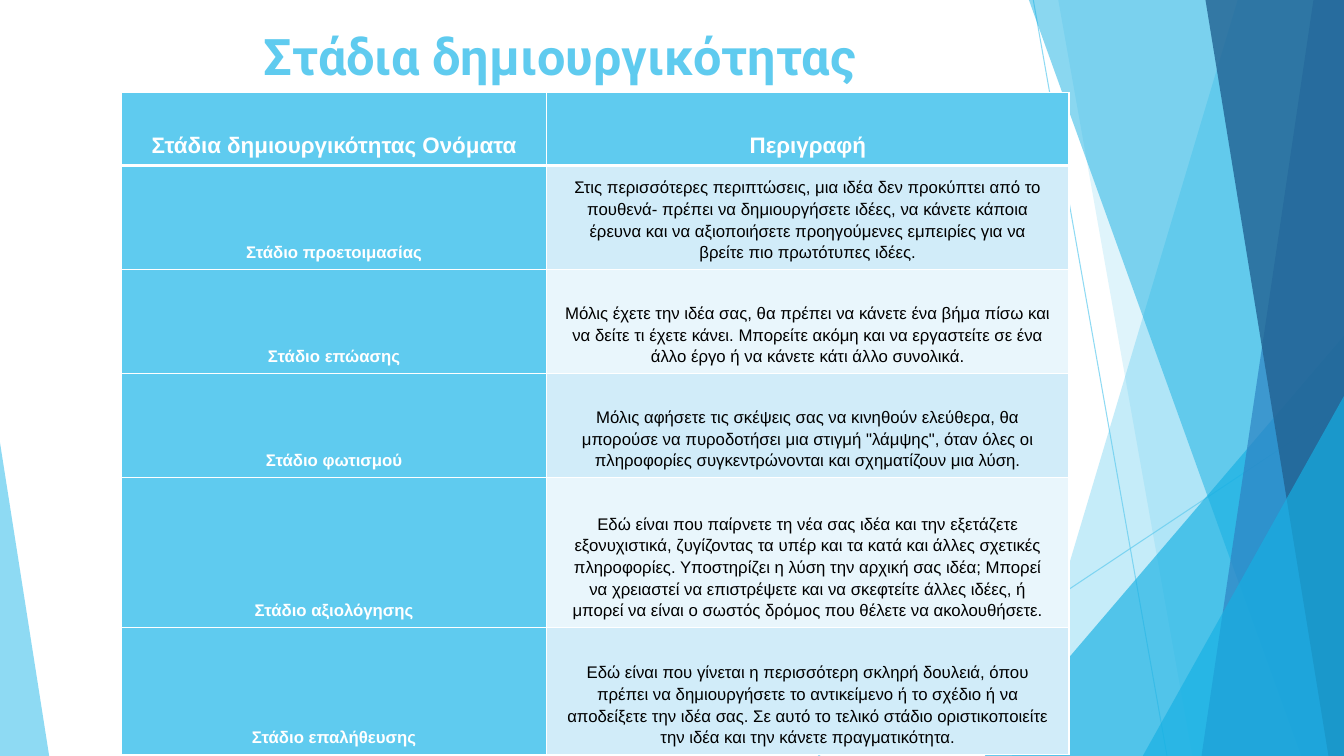
from lxml import etree
from pptx import Presentation
from pptx.dml.color import RGBColor
from pptx.enum.shapes import MSO_CONNECTOR, MSO_SHAPE
from pptx.enum.text import MSO_ANCHOR, PP_ALIGN
from pptx.oxml.ns import qn
from pptx.util import Cm, Pt

STRAIGHT = MSO_CONNECTOR.STRAIGHT
TRIANGLE = MSO_SHAPE.ISOSCELES_TRIANGLE
CENTER = PP_ALIGN.CENTER
TOP, BOTTOM = MSO_ANCHOR.TOP, MSO_ANCHOR.BOTTOM

SLIDE_W, SLIDE_H = 33.87, 19.05
SKY, AZURE, OCEAN, NAVY = "5FCBEF", "16B0E3", "2E83C3", "226292"
WHITE, BLACK = "FFFFFF", "000000"
BANDS = ["D1ECF9", "E9F6FC"]

HEADINGS = ("Στάδια δημιουργικότητας Ονόματα", "Περιγραφή")
STAGES = [
    ("Στάδιο προετοιμασίας",
     "Στις περισσότερες περιπτώσεις, μια ιδέα δεν προκύπτει από το πουθενά- "
     "πρέπει να δημιουργήσετε ιδέες, να κάνετε κάποια έρευνα και να αξιοποιήσετε "
     "προηγούμενες εμπειρίες για να βρείτε πιο πρωτότυπες ιδέες."),
    ("Στάδιο επώασης",
     "Μόλις έχετε την ιδέα σας, θα πρέπει να κάνετε ένα βήμα πίσω και να δείτε "
     "τι έχετε κάνει. Μπορείτε ακόμη και να εργαστείτε σε ένα άλλο έργο ή να "
     "κάνετε κάτι άλλο συνολικά."),
    ("Στάδιο φωτισμού",
     "Μόλις αφήσετε τις σκέψεις σας να κινηθούν ελεύθερα, θα μπορούσε να "
     "πυροδοτήσει μια στιγμή \"λάμψης\", όταν όλες οι πληροφορίες "
     "συγκεντρώνονται και σχηματίζουν μια λύση."),
    ("Στάδιο αξιολόγησης",
     "Εδώ είναι που παίρνετε τη νέα σας ιδέα και την εξετάζετε εξονυχιστικά, "
     "ζυγίζοντας τα υπέρ και τα κατά και άλλες σχετικές πληροφορίες. "
     "Υποστηρίζει η λύση την αρχική σας ιδέα; Μπορεί να χρειαστεί να "
     "επιστρέψετε και να σκεφτείτε άλλες ιδέες, ή μπορεί να είναι ο σωστός "
     "δρόμος που θέλετε να ακολουθήσετε."),
    ("Στάδιο επαλήθευσης",
     "Εδώ είναι που γίνεται η περισσότερη σκληρή δουλειά, όπου πρέπει να "
     "δημιουργήσετε το αντικείμενο ή το σχέδιο ή να αποδείξετε την ιδέα σας. Σε "
     "αυτό το τελικό στάδιο οριστικοποιείτε την ιδέα και την κάνετε πραγματικότητα."),
]
COLUMN_WIDTHS = [10.72, 13.16]
ROW_HEIGHTS = [1.83, 2.62, 2.62, 2.62, 3.78, 3.2]


def rgb(value):
    return RGBColor.from_string(value)


def write(frame, text, size=12, font="Arial", color=BLACK, bold=False, spacing=1.0):
    paragraph = frame.paragraphs[0]
    paragraph.alignment = CENTER
    paragraph.line_spacing = spacing
    run = paragraph.add_run()
    run.text = text
    run.font.size, run.font.name, run.font.bold = Pt(size), font, bold
    run.font.color.rgb = rgb(color)


def set_opacity(part, percent):
    """Apply opacity to the one explicit colour of a shape or connector."""
    tint = next(part.element.iter(qn("a:srgbClr")))
    etree.SubElement(tint, qn("a:alpha"), val=str(percent * 1000))


def tint_shape(shape, color, opacity):
    shape.shadow.inherit = False
    shape.fill.solid()
    shape.fill.fore_color.rgb = rgb(color)
    shape.line.fill.background()
    set_opacity(shape, opacity)


def add_ray(slide, x1, y1, x2, y2):
    ray = slide.shapes.add_connector(STRAIGHT, Cm(x1), Cm(y1), Cm(x2), Cm(y2))
    ray.line.color.rgb = rgb(SKY)
    ray.line.width = Pt(0.75)
    set_opacity(ray, 70)
    etree.SubElement(ray.element.spPr, qn("a:effectLst"))


def add_triangle(slide, left, top, width, height, apex, color, opacity):
    triangle = slide.shapes.add_shape(TRIANGLE, Cm(left), Cm(top), Cm(width), Cm(height))
    triangle.adjustments[0] = apex
    tint_shape(triangle, color, opacity)


def add_panel(slide, top_x, bottom_x, right, top, bottom, color, opacity):
    """Full-height panel with a slanted left edge."""
    builder = slide.shapes.build_freeform(Cm(top_x), Cm(top))
    corners = [(right, top), (right, bottom), (bottom_x, bottom)]
    builder.add_line_segments([(Cm(x), Cm(y)) for x, y in corners], close=True)
    tint_shape(builder.convert_to_shape(), color, opacity)


def add_facets(slide, left, top, width, height):
    right, bottom = left + width, top + height

    def panel(upper, lower, color, opacity):
        add_panel(slide, left + upper, left + lower, right, top, bottom, color, opacity)

    def corner(dx, dy):
        add_triangle(slide, left + dx, top + dy, width - dx, height - dy, 1, AZURE, 66)

    add_ray(slide, left + 5.42, top, left + 8.79, bottom)
    add_ray(slide, right, top + 10.24, left, bottom)
    panel(10.57, 4.88, SKY, 36)
    panel(6.05, 9.43, SKY, 20)
    corner(4.2, 8.46)
    panel(5.31, 12.17, AZURE, 50)
    panel(12.48, 9.66, OCEAN, 70)
    panel(9.76, 12.86, NAVY, 80)
    corner(8.18, 9.98)


def add_title(slide, left, top, width, height):
    title = slide.shapes.title
    title.left, title.top, title.width, title.height = map(Cm, (left, top, width, height))
    title.text_frame.vertical_anchor = TOP
    write(title.text_frame, "Στάδια δημιουργικότητας", size=36, font="Roboto",
          color=SKY, bold=True)


def add_borders(cell, top=1, bottom=1):
    properties = cell._tc.get_or_add_tcPr()
    for side, width in (("L", 1), ("R", 1), ("T", top), ("B", bottom)):
        edge = etree.SubElement(properties, qn(f"a:ln{side}"), w=str(Pt(width)))
        fill = etree.SubElement(edge, qn("a:solidFill"))
        etree.SubElement(fill, qn("a:srgbClr"), val=WHITE)


def add_stage_table(slide, left, top):
    rows = [HEADINGS] + STAGES
    table = slide.shapes.add_table(len(rows), len(HEADINGS), Cm(left), Cm(top),
                                   Cm(sum(COLUMN_WIDTHS)), Cm(sum(ROW_HEIGHTS))).table
    for column, width in zip(table.columns, COLUMN_WIDTHS):
        column.width = Cm(width)
    for row, height in zip(table.rows, ROW_HEIGHTS):
        row.height = Cm(height)
    for r, texts in enumerate(rows):
        for c, text in enumerate(texts):
            cell = table.cell(r, c)
            label = r == 0 or c == 0
            cell.vertical_anchor = BOTTOM
            cell.margin_left = cell.margin_right = Cm(0.46)
            cell.margin_top = cell.margin_bottom = Cm(0.18)
            add_borders(cell, top=3 if r == 1 else 1, bottom=3 if r == 0 else 1)
            cell.fill.solid()
            cell.fill.fore_color.rgb = rgb(SKY if label else BANDS[(r - 1) % 2])
            write(cell.text_frame, text, size=16 if r == 0 else 12,
                  color=WHITE if label else BLACK, bold=label, spacing=1.15)


def main():
    deck = Presentation()
    deck.slide_width, deck.slide_height = Cm(SLIDE_W), Cm(SLIDE_H)
    slide = deck.slides.add_slide(deck.slide_layouts[5])
    add_facets(slide, 20.62, 0, SLIDE_W - 20.62, SLIDE_H)
    add_triangle(slide, 0, 11.15, 1.24, 7.9, 0, SKY, 70)
    add_title(slide, 2.18, 0.5, 23.88, 3.66)
    add_stage_table(slide, 3.06, 2.34)
    deck.save("out.pptx")


if __name__ == "__main__":
    main()
